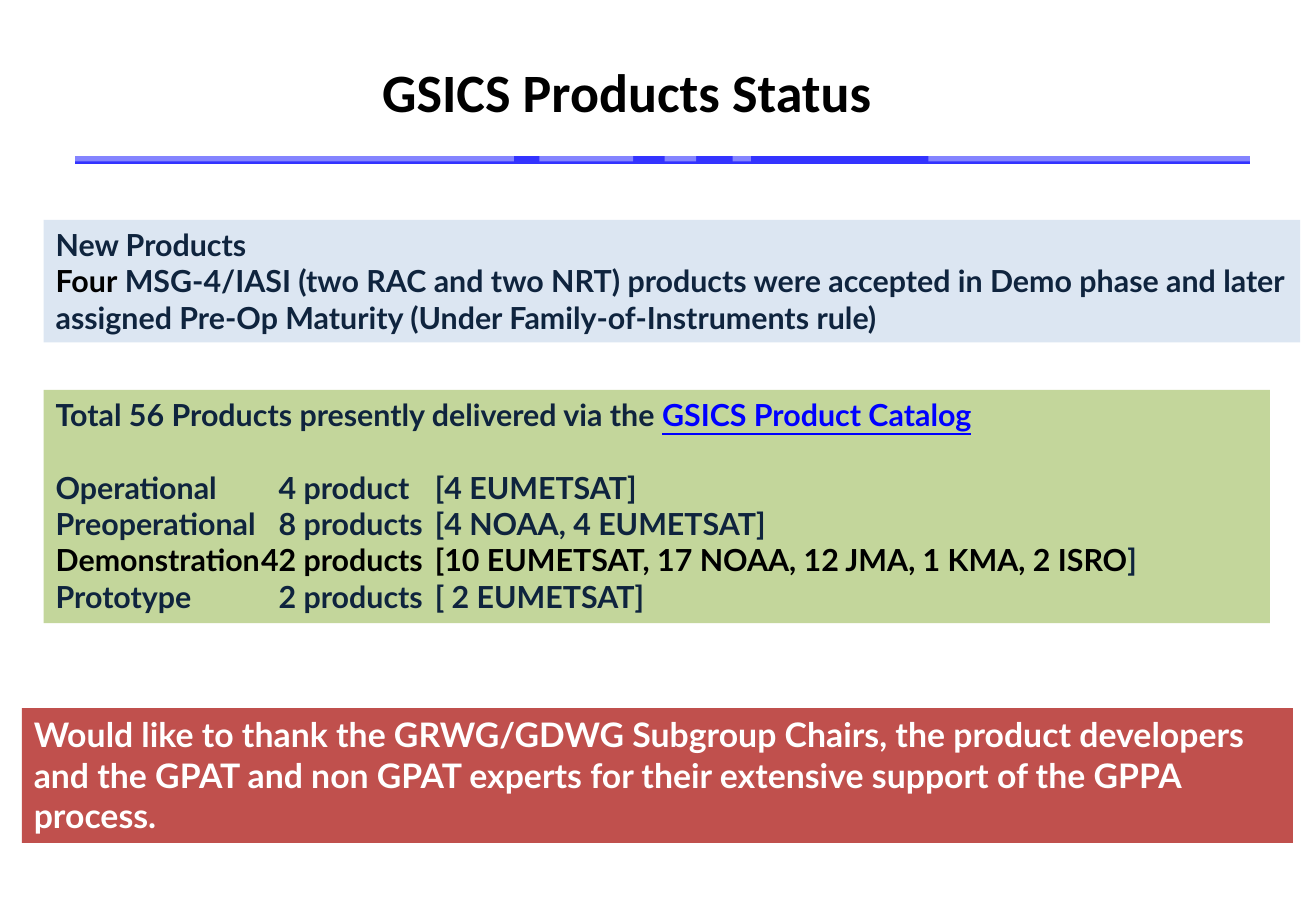
"""Build the GSICS Products Status slide."""
from dataclasses import dataclass

from lxml.etree import SubElement
from pptx import Presentation
from pptx.dml.color import RGBColor
from pptx.enum.shapes import MSO_CONNECTOR, MSO_SHAPE
from pptx.enum.text import MSO_ANCHOR, PP_ALIGN
from pptx.oxml.ns import qn
from pptx.util import Inches, Pt


@dataclass(frozen=True)
class Theme:
    black: str = "000000"
    white: str = "FFFFFF"
    navy: str = "0F243E"
    link: str = "0000FF"
    rule: str = "3333FF"
    pale_blue: str = "DCE6F2"
    green: str = "C3D69B"
    red: str = "C0504D"
    heading_font: str = "Calibri"
    body_font: str = "Lato"
    title: int = 32
    thanks: int = 20
    body: int = 18


def add_run(p, text, size, color, font, underline=None):
    r = p.add_run()
    r.text = text
    r.font.size, r.font.name, r.font.bold = Pt(size), font, True
    r.font.underline = underline
    r.font.color.rgb = RGBColor.from_string(color)


def add_rect(s, box, fill):
    sp = s.shapes.add_shape(MSO_SHAPE.RECTANGLE, *(Inches(v) for v in box))
    sp.shadow.inherit = False
    sp.fill.solid()
    sp.fill.fore_color.rgb = RGBColor.from_string(fill)
    sp.line.fill.background()
    return sp


theme = Theme()
prs = Presentation()
prs.slide_width, prs.slide_height = Inches(10.83), Inches(7.5)
s = prs.slides.add_slide(prs.slide_layouts[5])

rule = s.shapes.add_connector(
    MSO_CONNECTOR.STRAIGHT, Inches(0.62), Inches(1.32), Inches(10.29), Inches(1.32))
rule.line.color.rgb = RGBColor.from_string(theme.rule)
rule.line.width = Pt(4.5)
SubElement(rule._element.spPr, qn("a:effectLst"))

for left, width in [(0.01, 4.22), (4.44, 0.77), (5.47, 0.26), (6.03, 0.15), (7.64, 3.19)]:
    sp = add_rect(s, (left, 1.19, width, 0.14), theme.white)
    color = sp._element.spPr.find(qn("a:solidFill"))[0]
    SubElement(color, qn("a:alpha"), val="40000")

title = s.shapes.title
title.left, title.top, title.width, title.height = (
    Inches(v) for v in (2.22, 0.49, 5.88, 0.52))
tf = title.text_frame
tf.vertical_anchor = MSO_ANCHOR.MIDDLE
p = tf.paragraphs[0]
p.alignment = PP_ALIGN.CENTER
add_run(p, "GSICS Products Status", theme.title, theme.black, theme.heading_font)

thanks = [[("Would like to thank the GRWG/GDWG Subgroup Chairs, the product developers "
            "and the GPAT and non GPAT experts for their extensive support of the GPPA "
            "process.", theme.white)]]
new_products = [
    [("New Products", theme.navy)],
    [("Four", theme.black),
     (" MSG-4/IASI (two RAC and two NRT) products were accepted in Demo phase and later "
      "assigned Pre-Op Maturity (Under Family-of-Instruments rule)", theme.navy)],
]
totals = [
    [("Total 56 Products presently delivered via the ", theme.navy),
     ("GSICS Product Catalog", theme.link)],
    [("Operational\t4\tproduct\t[4 EUMETSAT]", theme.navy)],
    [("Preoperational\t8\tproducts\t[4 NOAA, 4 EUMETSAT]", theme.navy)],
    [("Demonstration\t42\tproducts\t[10 EUMETSAT, 17 NOAA, 12 JMA, 1 KMA, 2 ISRO",
      theme.black), ("]", theme.navy)],
    [("Prototype\t2\tproducts\t[ 2 EUMETSAT]", theme.navy)],
]
panels = [
    ((0.18, 5.83, 10.46, 1.11), theme.red, theme.thanks, thanks),
    ((0.36, 1.81, 10.34, 1.01), theme.pale_blue, theme.body, new_products),
    ((0.36, 3.21, 10.09, 1.92), theme.green, theme.body, totals),
]
count_tabs = [(1.98, "r"), (2.04, "l"), (3.12, "l")]

for box, fill, size, lines in panels:
    tf = add_rect(s, box, fill).text_frame
    tf.word_wrap = True
    tf.vertical_anchor = MSO_ANCHOR.TOP
    for i, line in enumerate(lines):
        p = tf.paragraphs[0] if i == 0 else tf.add_paragraph()
        p.alignment = PP_ALIGN.LEFT
        if "\t" in line[0][0]:
            tabs = SubElement(p._p.get_or_add_pPr(), qn("a:tabLst"))
            for pos, align in count_tabs:
                SubElement(tabs, qn("a:tab"), pos=str(Inches(pos)), algn=align)
            if i == 1:
                p.space_before = Pt(21.6)
        for text, color in line:
            add_run(p, text, size, color, theme.body_font, color == theme.link or None)

prs.save("out.pptx")
